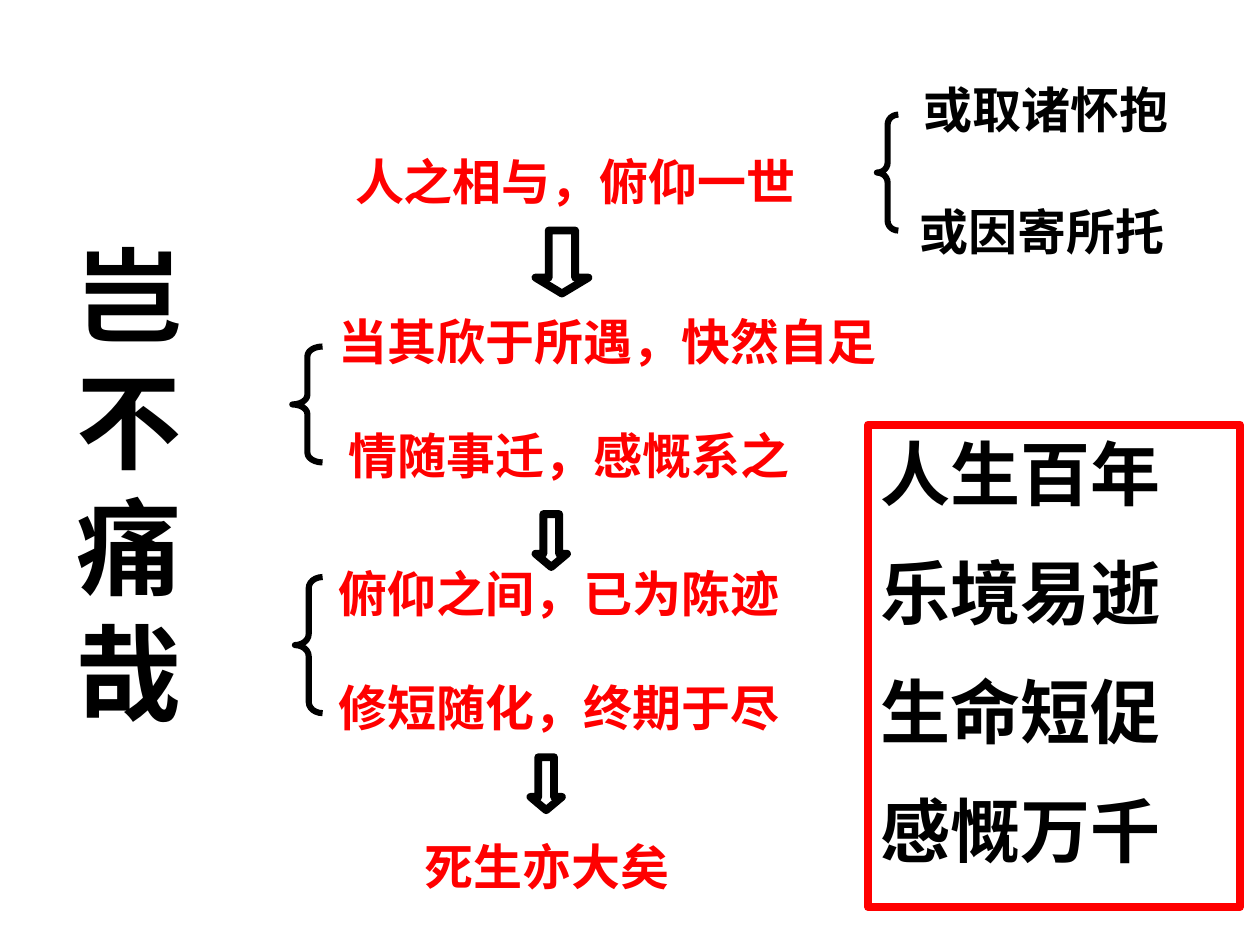
from pptx import Presentation
from pptx.dml.color import RGBColor
from pptx.enum.shapes import MSO_SHAPE
from pptx.enum.text import MSO_ANCHOR, MSO_AUTO_SIZE, PP_ALIGN
from pptx.util import Inches, Pt

BLACK = RGBColor(0, 0, 0)
RED = RGBColor(255, 0, 0)
SERIF = "Times New Roman"
SANS = "Arial"

TITLE = ("岂不痛哉", (0.51, 1.78, 1.34, 4.1))
PHRASE_HEIGHT = 0.57
PHRASES = [
    ("人之相与，俯仰一世", 2.72, 1.15, 4, RED),
    ("或取诸怀抱", 7.23, 0.58, 2.33, BLACK),
    ("或因寄所托", 7.2, 1.55, 2.25, BLACK),
    ("当其欣于所遇，快然自足", 2.59, 2.42, 4.67, RED),
    ("情随事迁，感慨系之", 2.67, 3.33, 4.33, RED),
    ("俯仰之间，已为陈迹", 2.59, 4.42, 4.17, RED),
    ("修短随化，终期于尽", 2.59, 5.33, 3.75, RED),
    ("死生亦大矣", 3.27, 6.59, 2.83, RED),
]
ARROWS = [
    ((4.25, 1.83, 0.42, 0.5), (0.5, 0.3)),
    ((4.25, 4.08, 0.25, 0.42), (0.5, 0.42)),
    ((4.21, 6.01, 0.25, 0.42), (0.5, 0.42)),
]
BRACES = [
    ((2.32, 2.75, 0.24, 0.92), (0.32, 0.5)),
    ((2.34, 4.58, 0.22, 1.08), (0.4, 0.5)),
    ((6.96, 0.91, 0.17, 0.92), (0.46, 0.5)),
]
SUMMARY = ["人生百年", "乐境易逝", "生命短促", "感慨万千"]
SUMMARY_BOX = (6.89, 3.37, 2.95, 3.83)


def write_lines(shape, lines, size, font_name, color):
    frame = shape.text_frame
    frame.word_wrap = True
    frame.auto_size = MSO_AUTO_SIZE.SHAPE_TO_FIT_TEXT
    frame.vertical_anchor = MSO_ANCHOR.TOP
    for index, line in enumerate(lines):
        paragraph = frame.add_paragraph() if index else frame.paragraphs[0]
        paragraph.alignment = PP_ALIGN.LEFT
        paragraph.space_before = Pt(size / 2)
        run = paragraph.add_run()
        run.text = line
        run.font.name = font_name
        run.font.size = Pt(size)
        run.font.bold = True
        run.font.color.rgb = color


def add_text(slide, text, box, size, color):
    shape = slide.shapes.add_textbox(*map(Inches, box))
    write_lines(shape, [text], size, SERIF, color)


def add_outline(slide, kind, box, color, width, adjustments=()):
    shape = slide.shapes.add_shape(kind, *map(Inches, box))
    shape.shadow.inherit = False
    shape.fill.background()
    shape.line.color.rgb = color
    shape.line.width = Pt(width)
    for index, value in enumerate(adjustments):
        shape.adjustments[index] = value
    return shape


def main():
    presentation = Presentation()
    presentation.slide_width = Inches(10)
    presentation.slide_height = Inches(7.5)
    slide = presentation.slides.add_slide(presentation.slide_layouts[6])

    add_text(slide, *TITLE, 60, BLACK)
    for text, left, top, width, color in PHRASES:
        add_text(slide, text, (left, top, width, PHRASE_HEIGHT), 28, color)
    for box, adjustments in ARROWS:
        add_outline(slide, MSO_SHAPE.DOWN_ARROW, box, BLACK, 4.5, adjustments)
    for box, adjustments in BRACES:
        add_outline(slide, MSO_SHAPE.LEFT_BRACE, box, BLACK, 3.5, adjustments)
    summary = add_outline(slide, MSO_SHAPE.RECTANGLE, SUMMARY_BOX, RED, 4.5)
    write_lines(summary, SUMMARY, 40, SANS, BLACK)

    presentation.save("out.pptx")


if __name__ == "__main__":
    main()
